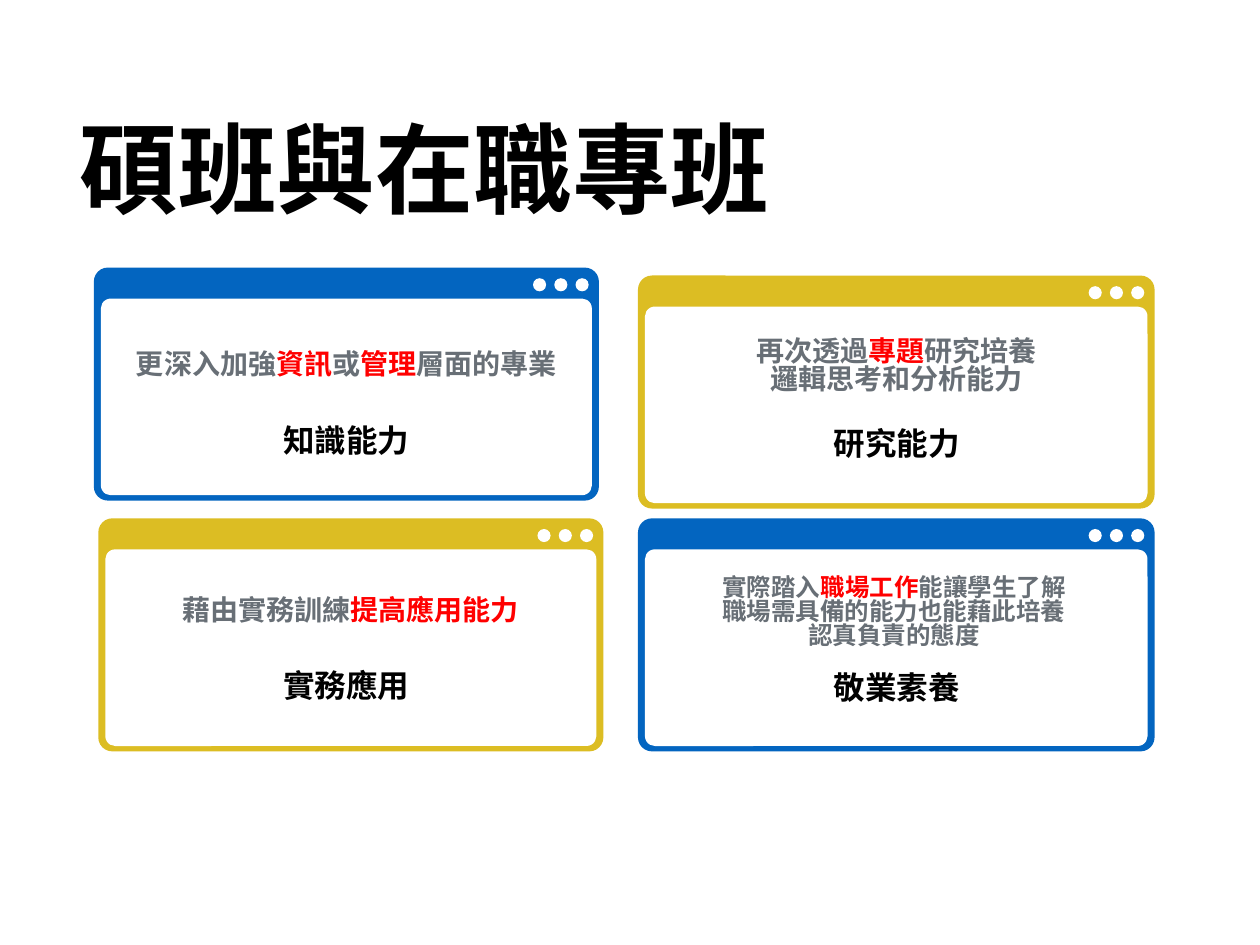
from lxml.etree import SubElement
from pptx import Presentation
from pptx.dml.color import RGBColor
from pptx.enum.shapes import MSO_SHAPE
from pptx.enum.text import MSO_ANCHOR, MSO_AUTO_SIZE, PP_ALIGN
from pptx.oxml.ns import qn
from pptx.util import Inches, Pt

BLUE = RGBColor(0x03, 0x65, 0xC0)
GOLD = RGBColor(0xDC, 0xBD, 0x23)
WHITE = RGBColor(0xFF, 0xFF, 0xFF)
BLACK = RGBColor(0x00, 0x00, 0x00)
GRAY = RGBColor(0x68, 0x6F, 0x76)
RED = RGBColor(0xFF, 0x00, 0x00)
FONT = "Noto Sans CJK SC"

prs = Presentation()
prs.slide_width, prs.slide_height = Inches(14.22), Inches(10.67)
s = prs.slides.add_slide(prs.slide_layouts[5])
COL = prs.slide_width / 144
ROW = prs.slide_height / 108


def add_panel(kind, left, top, width, height, color, radius=None):
    sp = s.shapes.add_shape(kind, int(left * COL), int(top * ROW), int(width * COL), int(height * ROW))
    sp.shadow.inherit = False
    sp.fill.solid()
    sp.fill.fore_color.rgb = color
    sp.line.fill.background()
    if radius:
        sp.adjustments[0] = radius


def write_text(sp, box, parts, size, colors, align, spacing):
    left, top, width, height = box
    place = {"left": left * COL, "top": top * ROW, "width": width * COL, "height": height * ROW}
    for name, value in place.items():
        setattr(sp, name, int(value))
    tf = sp.text_frame
    inset = int(1.42 * COL)
    frame = {"word_wrap": True, "auto_size": MSO_AUTO_SIZE.NONE, "vertical_anchor": MSO_ANCHOR.TOP,
             "margin_left": inset, "margin_right": inset, "margin_top": inset, "margin_bottom": inset}
    for name, value in frame.items():
        setattr(tf, name, value)
    p = tf.paragraphs[0]
    for name, value in {"alignment": align, "line_spacing": spacing}.items():
        setattr(p, name, value)
    for i, part in enumerate(parts):
        r = p.add_run()
        r.text = part
        for name, value in {"size": Pt(size), "bold": True, "name": FONT}.items():
            setattr(r.font, name, value)
        r.font.color.rgb = colors[i % len(colors)]
        SubElement(r.font._element, qn("a:ea")).set("typeface", FONT)


cards = [
    ((72.91, 59.24, 59.04), BLUE, "敬業素養", (84.56, 75.44), (80.51, 64.51, 43.34, 10.94), 19.9,
     ["實際踏入", "職場工作", "能讓學生了解職場需具備的能力也能藉此培養認真負責的態度"]),
    ((72.91, 31.49, 59.04), GOLD, "研究能力", (84.56, 47.49), (84.56, 37.37, 35.85, 12.05), 22.8,
     ["再次透過", "專題", "研究培養邏輯思考和分析能力"]),
    ((11.24, 59.24, 57.72), GOLD, "實務應用", (21.67, 75.24), (15.9, 66.94, 48.3, 10.94), 22.8,
     ["藉由實務訓練", "提高應用能力"]),
    ((10.73, 30.58, 57.72), BLUE, "知識能力", (21.67, 47.19), (12.86, 38.89, 53.47, 15.7), 22.8,
     ["更深入加強", "資訊", "或", "管理", "層面的專業"]),
]

write_text(s.shapes.title, (7.7, 12.46, 121.52, 7.39), ["碩班與在職專班"], 80, [BLACK], PP_ALIGN.LEFT, 0.9)

for (left, top, width), color, caption, caption_at, body_box, body_size, body in cards:
    add_panel(MSO_SHAPE.ROUNDED_RECTANGLE, left, top, width, 26.63, color, 0.06)
    add_panel(MSO_SHAPE.ROUNDED_RECTANGLE, left + 0.8, top + 3.54, width - 1.6, 22.48, WHITE, 0.05)
    for n in range(3):
        add_panel(MSO_SHAPE.OVAL, left + width - 2.67 - 2.43 * n, top + 1.22, 1.5, 1.5, WHITE)
    write_text(s.shapes.add_textbox(0, 0, 0, 0), (*caption_at, 35.85, 7.39), [caption], 25.6,
               [BLACK], PP_ALIGN.CENTER, 0.9)
    write_text(s.shapes.add_textbox(0, 0, 0, 0), body_box, body, body_size,
               [GRAY, RED], PP_ALIGN.CENTER, 0.82)

prs.save("out.pptx")
